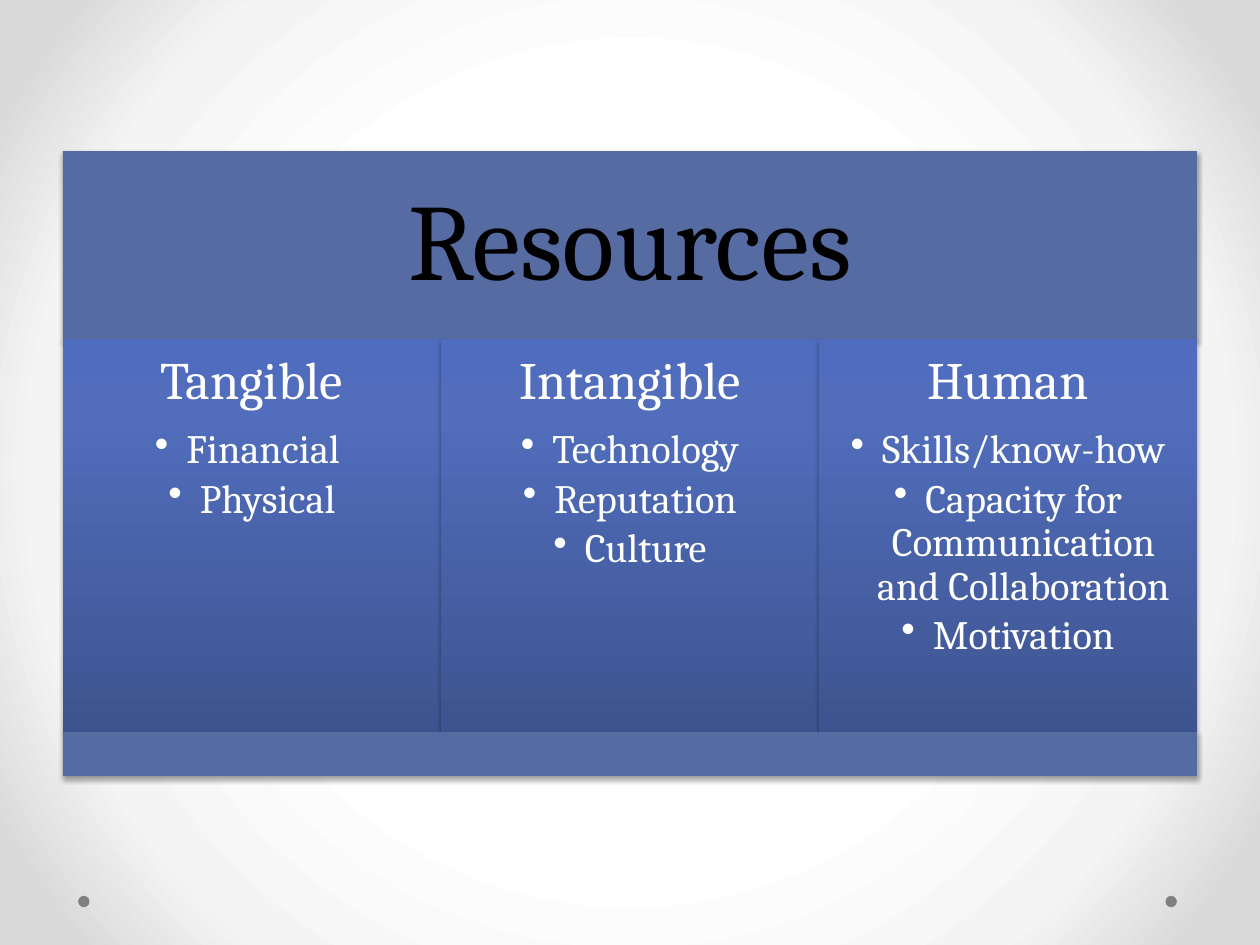
import pptx
import pptx.dml.color
import pptx.enum.shapes
import pptx.enum.text
import pptx.oxml
import pptx.oxml.ns
import pptx.util
from pptx.util import Inches

TITLE = "Resources"
COLUMNS = [
    ("Tangible", ["Financial ", "Physical"]),
    ("Intangible", ["Technology", "Reputation", "Culture"]),
    ("Human", ["Skills/know-how", "Capacity for Communication and Collaboration", "Motivation"]),
]

THEME = {
    "font": "Cambria",
    "title_size": 62, "heading_size": 30, "item_size": 23,
    "title_color": "000000", "text_color": "FFFFFF",
    "band": "576BA3", "dot": "808080", "shadow": "000000",
    "column": [(0, "3E5490"), (80, "516DBB"), (100, "4F6CBE")],
    "background": [(50, "FFFFFF"), (76, "F4F4F4"), (92, "DADADA")],
}

LEFT, TOP, WIDTH = 0.5, 1.2, 9
HEADER_HEIGHT, COLUMN_HEIGHT, FOOTER_HEIGHT = 1.49, 3.12, 0.35
DOT_SIZE, DOT_TOP, DOT_LEFTS = 0.09, 7.11, (9.25, 0.62)

RECTANGLE = pptx.enum.shapes.MSO_SHAPE.RECTANGLE
OVAL = pptx.enum.shapes.MSO_SHAPE.OVAL
ANCHOR = pptx.enum.text.MSO_ANCHOR
NAMESPACE = pptx.oxml.ns.nsdecls("a")


def color(value):
    return pptx.dml.color.RGBColor.from_string(value)


def set_gradient(parent, stops, direction):
    """Replace the solid fill inside parent with a gradient."""
    stop_xml = "".join(
        f'<a:gs pos="{position * 1000}"><a:srgbClr val="{value}"/></a:gs>'
        for position, value in stops)
    gradient = pptx.oxml.parse_xml(
        f'<a:gradFill {NAMESPACE} rotWithShape="1">'
        f'<a:gsLst>{stop_xml}</a:gsLst>{direction}</a:gradFill>')
    solid = parent.find(pptx.oxml.ns.qn("a:solidFill"))
    parent.replace(solid, gradient)


def add_shadow(shape):
    effects = shape._element.spPr.find(pptx.oxml.ns.qn("a:effectLst"))
    effects.append(pptx.oxml.parse_xml(
        f'<a:outerShdw {NAMESPACE} blurRad="{pptx.util.Pt(3.1)}" dist="{pptx.util.Pt(1.8)}" '
        f'dir="5400000" rotWithShape="0"><a:srgbClr val="{THEME["shadow"]}">'
        '<a:alpha val="35000"/></a:srgbClr></a:outerShdw>'))


def add_filled_shape(slide, kind, left, top, width, height, fill):
    shape = slide.shapes.add_shape(
        kind, Inches(left), Inches(top), Inches(width), Inches(height))
    shape.shadow.inherit = False
    shape.fill.solid()
    shape.fill.fore_color.rgb = color(fill)
    shape.line.fill.background()
    return shape


def prepare_text(shape, inset, anchor):
    frame = shape.text_frame
    frame.word_wrap = True
    frame.vertical_anchor = anchor
    frame.margin_left = frame.margin_right = Inches(inset)
    frame.margin_top = frame.margin_bottom = Inches(inset)
    return frame


def write_text(paragraph, text, size, fill, space_after=0, bullet=False):
    paragraph.alignment = pptx.enum.text.PP_ALIGN.CENTER
    paragraph.line_spacing = 0.9
    paragraph.space_after = pptx.util.Pt(space_after)
    run = paragraph.add_run()
    run.text = text
    run.font.name = THEME["font"]
    run.font.size = pptx.util.Pt(size)
    run.font.color.rgb = color(fill)
    if bullet:
        paragraph.level = 1
        properties = paragraph._p.get_or_add_pPr()
        properties.set("marL", str(Inches(0.25)))
        properties.set("indent", str(Inches(-0.25)))
        properties.append(pptx.oxml.parse_xml(f'<a:buChar {NAMESPACE} char="•"/>'))


def add_band(slide, top, height):
    band = add_filled_shape(slide, RECTANGLE, LEFT, top, WIDTH, height, THEME["band"])
    add_shadow(band)
    return band


def add_column(slide, left, top, width, heading, items):
    column = add_filled_shape(
        slide, RECTANGLE, left, top, width, COLUMN_HEIGHT, THEME["band"])
    set_gradient(column._element.spPr, THEME["column"],
                 '<a:lin ang="16200000" scaled="0"/>')
    add_shadow(column)
    frame = prepare_text(column, 0.12, ANCHOR.TOP)
    heading_size, item_size = THEME["heading_size"], THEME["item_size"]
    write_text(frame.paragraphs[0], heading, heading_size, THEME["text_color"],
               space_after=0.35 * heading_size)
    for item in items:
        write_text(frame.add_paragraph(), item, item_size, THEME["text_color"],
                   space_after=0.15 * item_size, bullet=True)


def set_background(slide):
    slide.background.fill.solid()
    properties = next(slide._element.iter(pptx.oxml.ns.qn("p:bgPr")))
    set_gradient(properties, THEME["background"],
                 '<a:path path="circle"><a:fillToRect l="50000" t="50000" '
                 'r="50000" b="50000"/></a:path>')


def main():
    presentation = pptx.Presentation()
    presentation.slide_width = Inches(10)
    presentation.slide_height = Inches(7.5)
    slide = presentation.slides.add_slide(presentation.slide_layouts[6])
    set_background(slide)

    for left in DOT_LEFTS:
        add_filled_shape(slide, OVAL, left, DOT_TOP, DOT_SIZE, DOT_SIZE, THEME["dot"])

    header = add_band(slide, TOP, HEADER_HEIGHT)
    frame = prepare_text(header, 0.26, ANCHOR.MIDDLE)
    write_text(frame.paragraphs[0], TITLE, THEME["title_size"], THEME["title_color"])

    column_top = TOP + HEADER_HEIGHT
    column_width = WIDTH / len(COLUMNS)
    for index, (heading, items) in enumerate(COLUMNS):
        add_column(slide, LEFT + index * column_width, column_top, column_width,
                   heading, items)

    add_band(slide, column_top + COLUMN_HEIGHT, FOOTER_HEIGHT)
    presentation.save("out.pptx")


if __name__ == "__main__":
    main()
